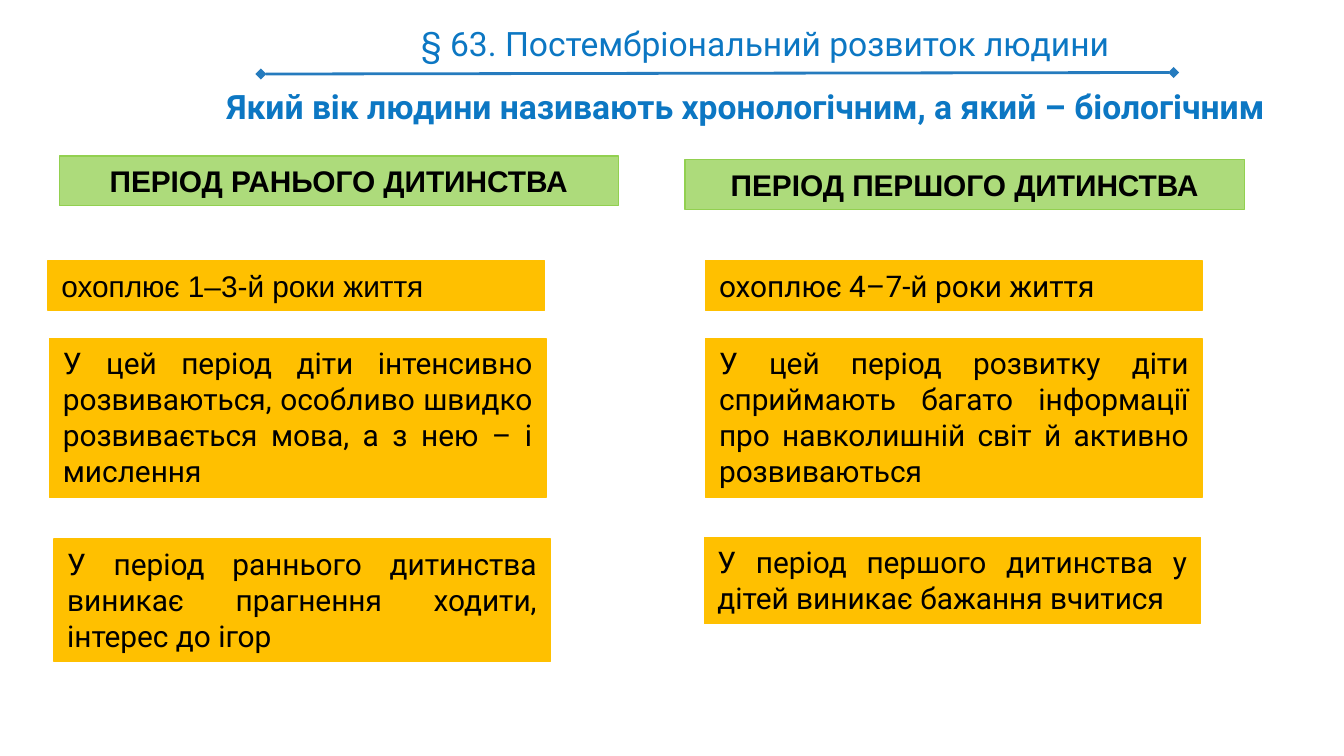
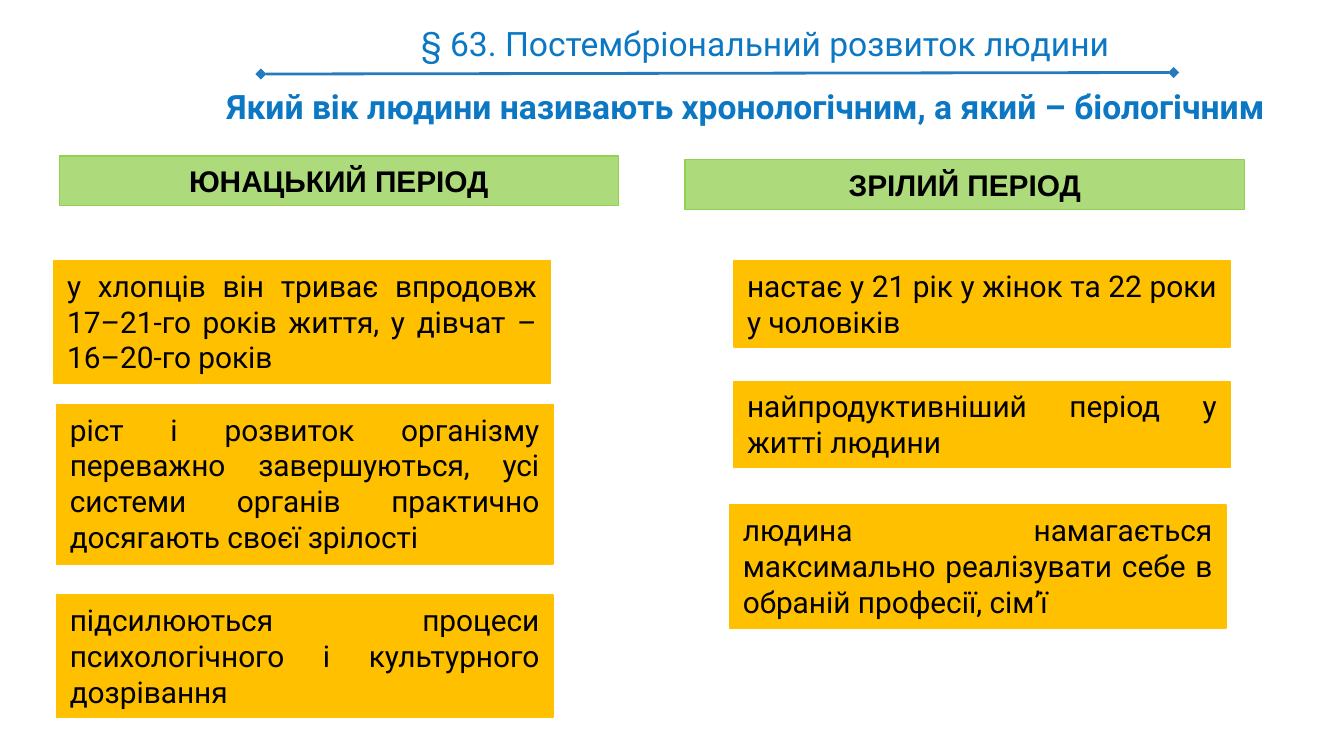
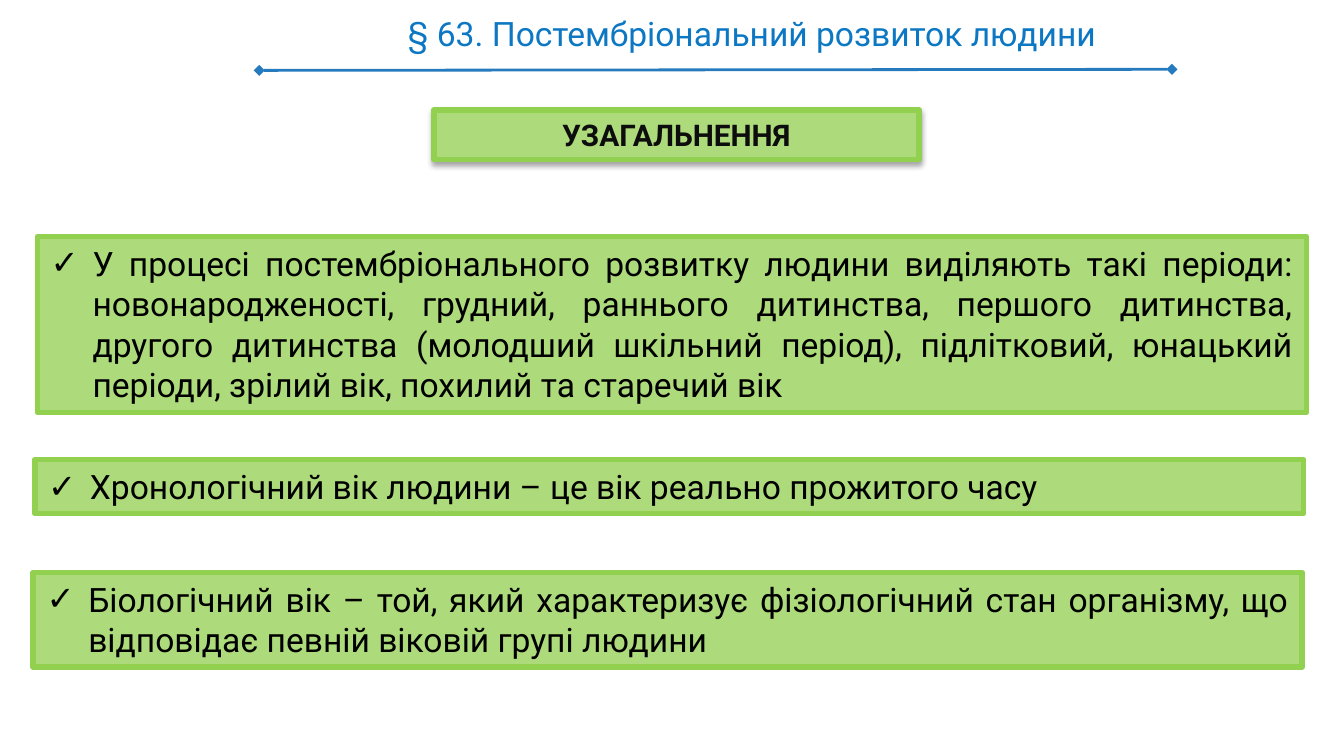
from lxml import etree
from pptx import Presentation
from pptx.dml.color import RGBColor
from pptx.enum.shapes import MSO_CONNECTOR, MSO_SHAPE
from pptx.enum.text import MSO_ANCHOR, MSO_AUTO_SIZE, PP_ALIGN
from pptx.oxml.ns import qn
from pptx.util import Cm, Pt

RECT, STRAIGHT = MSO_SHAPE.RECTANGLE, MSO_CONNECTOR.STRAIGHT
CENTER, JUSTIFY = PP_ALIGN.CENTER, PP_ALIGN.JUSTIFY
TOP, GROW = MSO_ANCHOR.TOP, MSO_AUTO_SIZE.SHAPE_TO_FIT_TEXT

# Shared colours, fonts and sizes
TITLE_BLUE, RULE_BLUE = "0C77C3", "257BBE"
GREEN, GREEN_EDGE, AMBER = "ADDB7B", "92D050", "FFC000"
BLACK, SOFT_BLACK = "000000", "0D0D0D"
SANS, ROBOTO = "Arial", "Roboto"
TITLE = "§ 63. Постембріональний розвиток людини"
QUESTION = "Який вік людини називають хронологічним, а який – біологічним"
FACT_WIDTH, SUMMARY_WIDTH = 9.38, 23.98
INDENT = 0.79

# Each column: heading, then facts as (left, top, lines, text, font)
EARLY_CHILDHOOD = ("ПЕРІОД РАНЬОГО ДИТИНСТВА", [
    (0.91, 4.93, 1, "охоплює 1–3-й роки життя", SANS),
    (0.94, 6.4, 4, "У цей період діти інтенсивно розвиваються, особливо швидко "
     "розвивається мова, а з нею – і мислення", ROBOTO),
    (1.02, 10.19, 3, "У період раннього дитинства виникає прагнення ходити, "
     "інтерес до ігор", ROBOTO),
])
FIRST_CHILDHOOD = ("ПЕРІОД ПЕРШОГО ДИТИНСТВА", [
    (13.34, 4.93, 1, "охоплює 4–7-й роки життя", ROBOTO),
    (13.34, 6.4, 4, "У цей період розвитку діти сприймають багато інформації "
     "про навколишній світ й активно розвиваються", ROBOTO),
    (13.31, 10.16, 2, "У період першого дитинства у дітей виникає бажання "
     "вчитися", ROBOTO),
])
YOUTH = ("ЮНАЦЬКИЙ ПЕРІОД", [
    (1.02, 4.93, 3, "у хлопців він триває впродовж 17–21-го років життя, "
     "у дівчат – 16–20-го років", ROBOTO),
    (1.07, 7.65, 4, "ріст і розвиток організму переважно завершуються, усі "
     "системи органів практично досягають своєї зрілості", ROBOTO),
    (1.07, 11.25, 3, "підсилюються процеси психологічного і культурного "
     "дозрівання", ROBOTO),
])
MATURITY = ("ЗРІЛИЙ ПЕРІОД", [
    (13.87, 4.93, 2, "настає у 21 рік у жінок та 22 роки у чоловіків", ROBOTO),
    (13.87, 7.21, 2, "найпродуктивніший період у житті людини", ROBOTO),
    (13.79, 9.55, 3, "людина намагається максимально реалізувати себе в "
     "обраній професії, сім’ї", ROBOTO),
])
SUMMARY = [
    (0.71, 4.47, 4, "У процесі постембріонального розвитку людини виділяють "
     "такі періоди: новонародженості, грудний, раннього дитинства, першого "
     "дитинства, другого дитинства (молодший шкільний період), підлітковий, "
     "юнацький періоди, зрілий вік, похилий та старечий вік"),
    (0.66, 8.69, 1, "Хронологічний вік людини – це вік реально прожитого часу"),
    (0.63, 10.82, 2, "Біологічний вік – той, який характеризує фізіологічний "
     "стан організму, що відповідає певній віковій групі людини"),
]


def rgb(value):
    return RGBColor.from_string(value)


def add_xml(parent, tag, **attrs):
    return etree.SubElement(parent, qn(tag), attrs)


def write(sp, text, size, font=ROBOTO, color=BLACK, bold=False, align=CENTER,
          check=False):
    """Put one paragraph in a shape, with a check mark bullet if asked."""
    tf = sp.text_frame
    tf.word_wrap = True
    tf.auto_size = GROW
    tf.vertical_anchor = TOP
    p = tf.paragraphs[0]
    p.text = text
    p.alignment = align
    if check:
        pPr = p._p.get_or_add_pPr()
        pPr.set("marL", str(Cm(INDENT)))
        pPr.set("indent", str(-Cm(INDENT)))
        add_xml(add_xml(pPr, "a:buClr"), "a:srgbClr", val=BLACK)
        add_xml(pPr, "a:buFont", typeface=SANS)
        add_xml(pPr, "a:buChar", char="✓")
    p.font.size = Pt(size)
    p.font.name = font
    p.font.bold = bold
    p.font.color.rgb = rgb(color)


def add_box(s, left, top, width, height, fill, edge, weight):
    sp = s.shapes.add_shape(RECT, Cm(left), Cm(top), Cm(width), Cm(height))
    sp.shadow.inherit = False
    sp.fill.solid()
    sp.fill.fore_color.rgb = rgb(fill)
    sp.line.color.rgb = rgb(edge)
    sp.line.width = Pt(weight)
    return sp


def add_label(s, left, top, width, text, bold=False):
    sp = s.shapes.add_textbox(Cm(left), Cm(top), Cm(width), Cm(1.27))
    tf = sp.text_frame
    tf.margin_left = tf.margin_right = Cm(0.25)
    tf.margin_top = tf.margin_bottom = Cm(0.25)
    write(sp, text, 18, color=TITLE_BLUE, bold=bold)


def add_rule(s, left, start_y, end_y):
    """Title underline with a diamond at each end."""
    line = s.shapes.add_connector(STRAIGHT, Cm(left), Cm(start_y),
                                  Cm(left + 17.25), Cm(end_y))
    line.line.color.rgb = rgb(RULE_BLUE)
    line.line.width = Pt(1.5)
    ln = line.line._get_or_add_ln()
    for end in ("a:headEnd", "a:tailEnd"):
        add_xml(ln, end, type="diamond")
    add_xml(line._element.spPr, "a:effectLst")


def add_shadow(sp):
    effects = sp._element.spPr.find(qn("a:effectLst"))
    shadow = add_xml(effects, "a:outerShdw", blurRad=str(Pt(3.1)),
                     dist=str(Pt(1.8)), dir="5400000", rotWithShape="0")
    color = add_xml(shadow, "a:srgbClr", val=BLACK)
    add_xml(color, "a:alpha", val="35000")


def add_column(s, left, top, heading, facts):
    """Green period heading with its amber facts."""
    sp = add_box(s, left, top, 10.57, 0.94, GREEN, GREEN_EDGE, 0.75)
    write(sp, heading, 16, SANS, bold=True)
    for x, y, lines, text, font in facts:
        height = 0.94 + 0.69 * (lines - 1)
        sp = add_box(s, x, y, FACT_WIDTH, height, AMBER, AMBER, 0.75)
        write(sp, text, 16, font, align=JUSTIFY)


def add_period_slide(s, left_column, right_column):
    add_label(s, 5.36, 0.18, 18.21, TITLE)
    add_rule(s, 4.93, 1.4, 1.37)
    add_label(s, 4.01, 1.37, 20.17, QUESTION, bold=True)
    add_column(s, 1.12, 2.95, *left_column)
    add_column(s, 12.95, 3.02, *right_column)


def add_summary_slide(s):
    sp = add_box(s, 8.2, 2.08, 9.17, 0.94, GREEN, GREEN_EDGE, 3)
    add_shadow(sp)
    write(sp, "УЗАГАЛЬНЕННЯ", 16, color=SOFT_BLACK, bold=True)
    for left, top, lines, text in SUMMARY:
        height = 1.02 + 0.77 * (lines - 1)
        sp = add_box(s, left, top, SUMMARY_WIDTH, height, GREEN, GREEN_EDGE, 3)
        write(sp, text, 18, align=JUSTIFY, check=True)
    add_label(s, 5.11, 0, 18.21, TITLE)
    add_rule(s, 4.9, 1.33, 1.31)


def main():
    prs = Presentation()
    prs.slide_width, prs.slide_height = Cm(25.4), Cm(14.29)
    blank = prs.slide_layouts[6]
    for columns in ((EARLY_CHILDHOOD, FIRST_CHILDHOOD), (YOUTH, MATURITY)):
        add_period_slide(prs.slides.add_slide(blank), *columns)
    add_summary_slide(prs.slides.add_slide(blank))
    prs.save("out.pptx")


if __name__ == "__main__":
    main()
